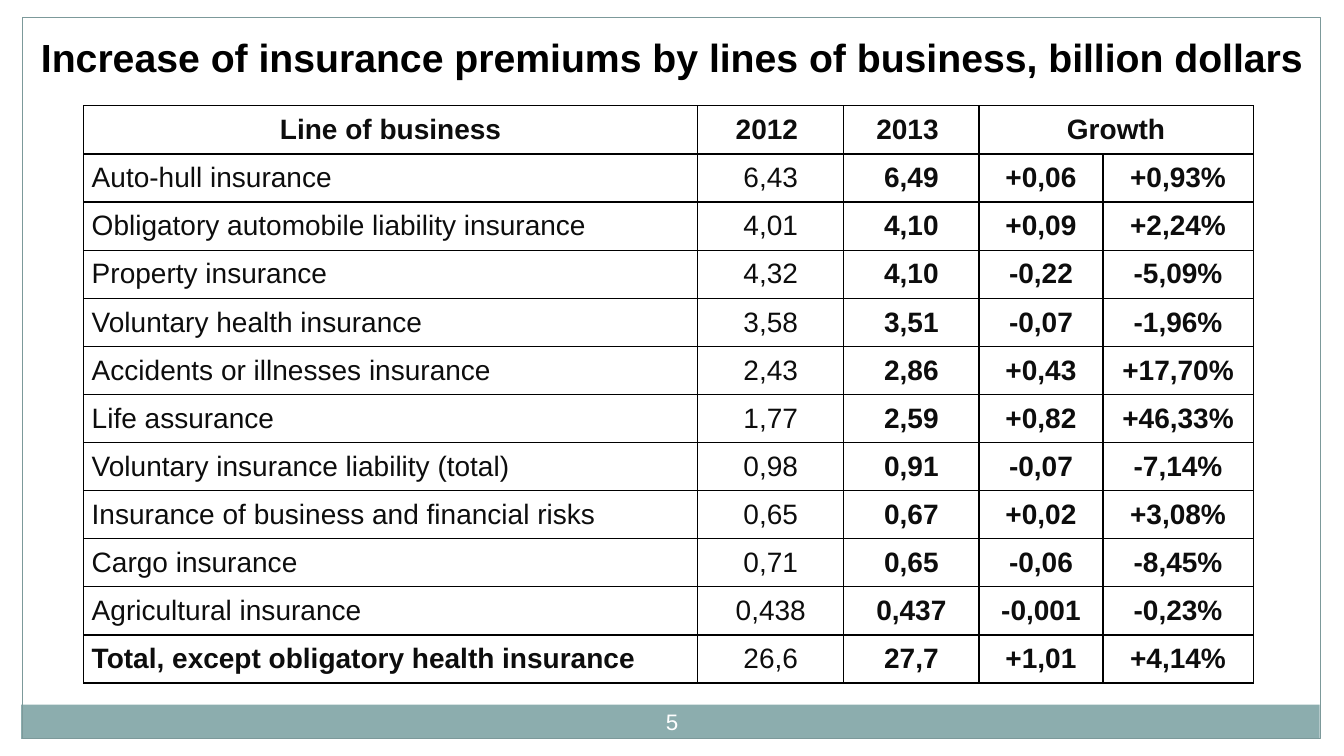
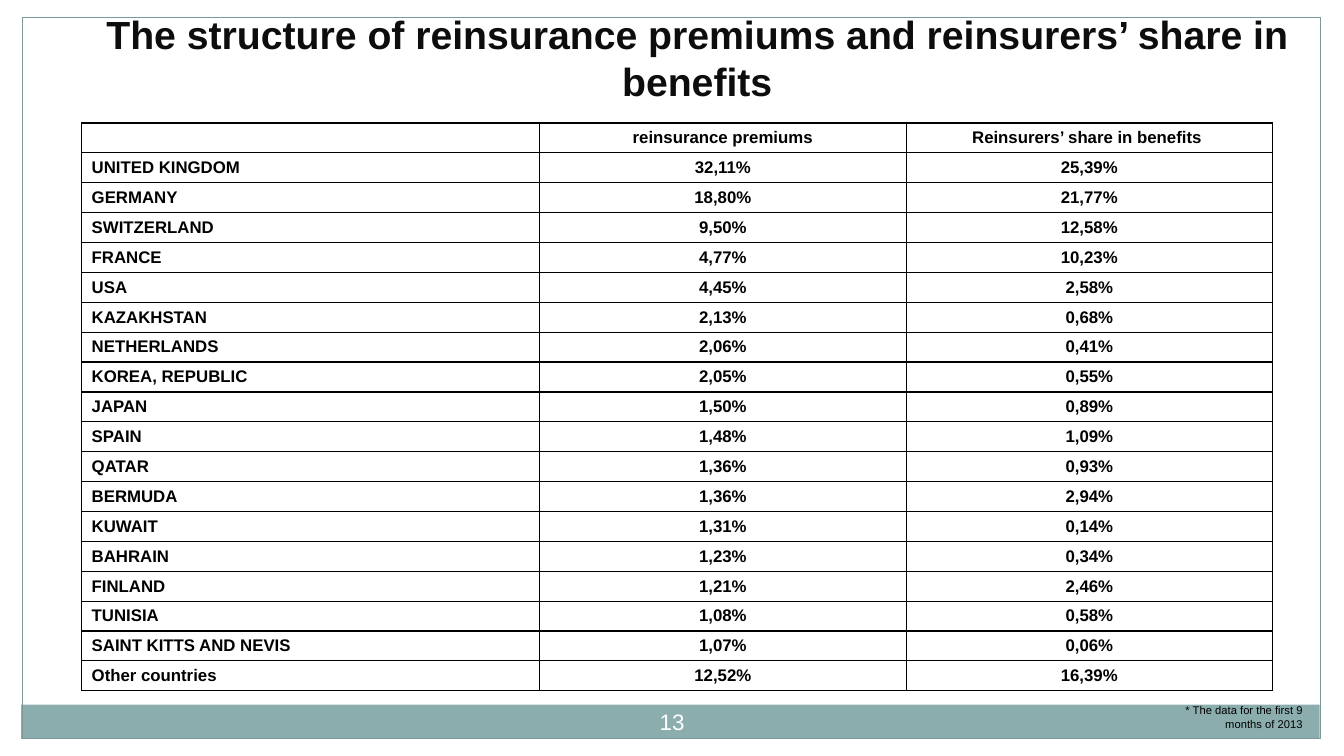
import dataclasses

import lxml.etree
import pptx
import pptx.dml.color
import pptx.enum.shapes
import pptx.enum.text
import pptx.oxml.ns
import pptx.util

Inches = pptx.util.Inches
Pt = pptx.util.Pt
ALIGN = pptx.enum.text.PP_ALIGN
ANCHOR = pptx.enum.text.MSO_ANCHOR


@dataclasses.dataclass(frozen=True)
class Theme:
    """Colours, font and type sizes shared by the slides."""

    font: str = "Arial"
    band: str = "8CADAE"
    frame: str = "7C999A"
    black: str = "000000"
    ink: str = "0D0D0D"
    white: str = "FFFFFF"
    title: int = 28
    lines: int = 20
    number: int = 16
    countries: int = 12
    note: int = 8
    rule: int = 1


THEME = Theme()
SLIDE_WIDTH, SLIDE_HEIGHT = 13.33, 7.5

LINES_OF_BUSINESS = [
    ("Line of business", "2012 ", "2013 ", "Growth", ""),
    ("Auto-hull insurance", "6,43", "6,49", "+0,06", "+0,93%"),
    ("Obligatory automobile liability insurance", "4,01", "4,10", "+0,09", "+2,24%"),
    ("Property insurance", "4,32", "4,10", "-0,22", "-5,09%"),
    ("Voluntary health insurance", "3,58", "3,51", "-0,07", "-1,96%"),
    ("Accidents or illnesses insurance", "2,43", "2,86", "+0,43", "+17,70%"),
    ("Life assurance", "1,77", "2,59", "+0,82", "+46,33%"),
    ("Voluntary insurance liability (total)", "0,98", "0,91", "-0,07", "-7,14%"),
    ("Insurance of business and financial risks", "0,65", "0,67", "+0,02", "+3,08%"),
    ("Cargo insurance", "0,71", "0,65", "-0,06", "-8,45%"),
    ("Agricultural insurance", "0,438", "0,437", "-0,001", "-0,23%"),
    ("Total, except obligatory health insurance", "26,6", "27,7", "+1,01", "+4,14%"),
]

COUNTRIES = [
    ("", "reinsurance premiums", "Reinsurers’ share in benefits "),
    ("UNITED KINGDOM", "32,11%", "25,39%"),
    ("GERMANY", "18,80%", "21,77%"),
    ("SWITZERLAND", "9,50%", "12,58%"),
    ("FRANCE", "4,77%", "10,23%"),
    ("USA", "4,45%", "2,58%"),
    ("KAZAKHSTAN", "2,13%", "0,68%"),
    ("NETHERLANDS", "2,06%", "0,41%"),
    ("KOREA, REPUBLIC", "2,05%", "0,55%"),
    ("JAPAN", "1,50%", "0,89%"),
    ("SPAIN", "1,48%", "1,09%"),
    ("QATAR", "1,36%", "0,93%"),
    ("BERMUDA", "1,36%", "2,94%"),
    ("KUWAIT", "1,31%", "0,14%"),
    ("BAHRAIN", "1,23%", "0,34%"),
    ("FINLAND", "1,21%", "2,46%"),
    ("TUNISIA", "1,08%", "0,58%"),
    ("SAINT KITTS AND NEVIS", "1,07%", "0,06%"),
    ("Other countries", "12,52%", "16,39%"),
]


def rgb(value):
    """Turn a hex string into a colour."""
    return pptx.dml.color.RGBColor.from_string(value)


def style(paragraph, size, color, bold=False, align=ALIGN.CENTER):
    """Set the font and alignment of a paragraph."""
    paragraph.alignment = align
    paragraph.font.name = THEME.font
    paragraph.font.size = Pt(size)
    paragraph.font.bold = bold
    paragraph.font.color.rgb = rgb(color)


def add_text(slide, box, text, size, color, anchor=ANCHOR.TOP, **look):
    """Place one wrapped paragraph in a box."""
    frame = slide.shapes.add_textbox(*map(Inches, box)).text_frame
    frame.word_wrap = True
    frame.vertical_anchor = anchor
    frame.text = text
    style(frame.paragraphs[0], size, color, **look)


def add_panel(slide, box, fill=None, line=None):
    """Place a plain rectangle with an optional fill and outline."""
    panel = slide.shapes.add_shape(
        pptx.enum.shapes.MSO_SHAPE.RECTANGLE, *map(Inches, box))
    panel.shadow.inherit = False
    if fill:
        panel.fill.solid()
        panel.fill.fore_color.rgb = rgb(fill)
    else:
        panel.fill.background()
    if line:
        panel.line.color.rgb = rgb(line)
        panel.line.width = Pt(0.75)
    else:
        panel.line.fill.background()


def rule_cell(cell):
    """Draw a solid rule on every side of a table cell."""
    properties = cell._tc.get_or_add_tcPr()
    qn = pptx.oxml.ns.qn
    for side in ("a:lnL", "a:lnR", "a:lnT", "a:lnB"):
        rule = lxml.etree.SubElement(properties, qn(side), w=str(Pt(THEME.rule)))
        fill = lxml.etree.SubElement(rule, qn("a:solidFill"))
        lxml.etree.SubElement(fill, qn("a:srgbClr"), val=THEME.black)


def add_grid(slide, box, rows, widths, size, color, inset, is_bold):
    """Place a ruled table with left-aligned labels and centred values."""
    grid = slide.shapes.add_table(len(rows), len(widths), *map(Inches, box)).table
    grid.first_row = grid.horz_banding = False
    for column, width in zip(grid.columns, widths):
        column.width = Inches(width)
    for r, row in enumerate(rows):
        grid.rows[r].height = Inches(box[3] / len(rows))
        for c, text in enumerate(row):
            cell = grid.cell(r, c)
            rule_cell(cell)
            cell.fill.background()
            cell.vertical_anchor = ANCHOR.MIDDLE
            cell.margin_top = cell.margin_bottom = 0
            cell.margin_left = cell.margin_right = Inches(inset)
            cell.text = text
            is_label = r > 0 and c == 0
            style(cell.text_frame.paragraphs[0], size, color, is_bold(r, c),
                  ALIGN.LEFT if is_label else ALIGN.CENTER)
    return grid


def add_base(deck, number):
    """Add a blank slide with its margins, frame, footer band and page number."""
    slide = deck.slides.add_slide(deck.slide_layouts[6])
    left, top, width, height = 0.22, 0.17, 12.88, 7.16
    band = 0.34
    band_top = top + height - band
    margins = ((0, 0, SLIDE_WIDTH, top),
               (SLIDE_WIDTH - left, 0, left, SLIDE_HEIGHT),
               (0, 0, left, SLIDE_HEIGHT))
    for margin in margins:
        add_panel(slide, margin, fill=THEME.white)
    add_panel(slide, (left - 0.01, band_top, width, band), fill=THEME.band)
    add_panel(slide, (left, top, width, height), line=THEME.frame)
    add_text(slide, (left + 6, band_top - 0.07, 0.89, 0.48), str(number),
             THEME.number, THEME.white, ANCHOR.MIDDLE)
    return slide


def add_premiums_slide(deck):
    """Build the slide on premiums by line of business."""
    slide = add_base(deck, 5)
    last = len(LINES_OF_BUSINESS) - 1
    grid = add_grid(
        slide, (0.83, 1.05, 11.6, 5.73), LINES_OF_BUSINESS,
        (6.09, 1.45, 1.34, 1.23, 1.49), THEME.lines, THEME.ink, 0.08,
        lambda r, c: r == 0 or c > 1 or (r == last and c == 0))
    grid.cell(0, 3).merge(grid.cell(0, 4))
    add_text(slide, (0, 0.28, SLIDE_WIDTH, 0.57),
             "Increase of insurance premiums by lines of business, billion dollars",
             THEME.title, THEME.black, bold=True)


def add_reinsurance_slide(deck):
    """Build the slide on reinsurance by country."""
    slide = add_base(deck, 13)
    add_text(slide, (0.81, 0.06, 12.21, 1.03),
             "The structure of reinsurance premiums and reinsurers’ share in benefits",
             THEME.title, THEME.ink, ANCHOR.BOTTOM, bold=True)
    add_grid(slide, (0.81, 1.22, 11.81, 5.64), COUNTRIES, (4.54, 3.64, 3.63),
             THEME.countries, THEME.black, 0.1, lambda r, c: True)
    add_text(slide, (11.48, 6.93, 1.54, 0.37),
             "* The data for the first 9 months of 2013",
             THEME.note, THEME.black, align=ALIGN.RIGHT)


def main():
    """Build and save the deck."""
    deck = pptx.Presentation()
    deck.slide_width = Inches(SLIDE_WIDTH)
    deck.slide_height = Inches(SLIDE_HEIGHT)
    add_premiums_slide(deck)
    add_reinsurance_slide(deck)
    deck.save("out.pptx")


if __name__ == "__main__":
    main()
